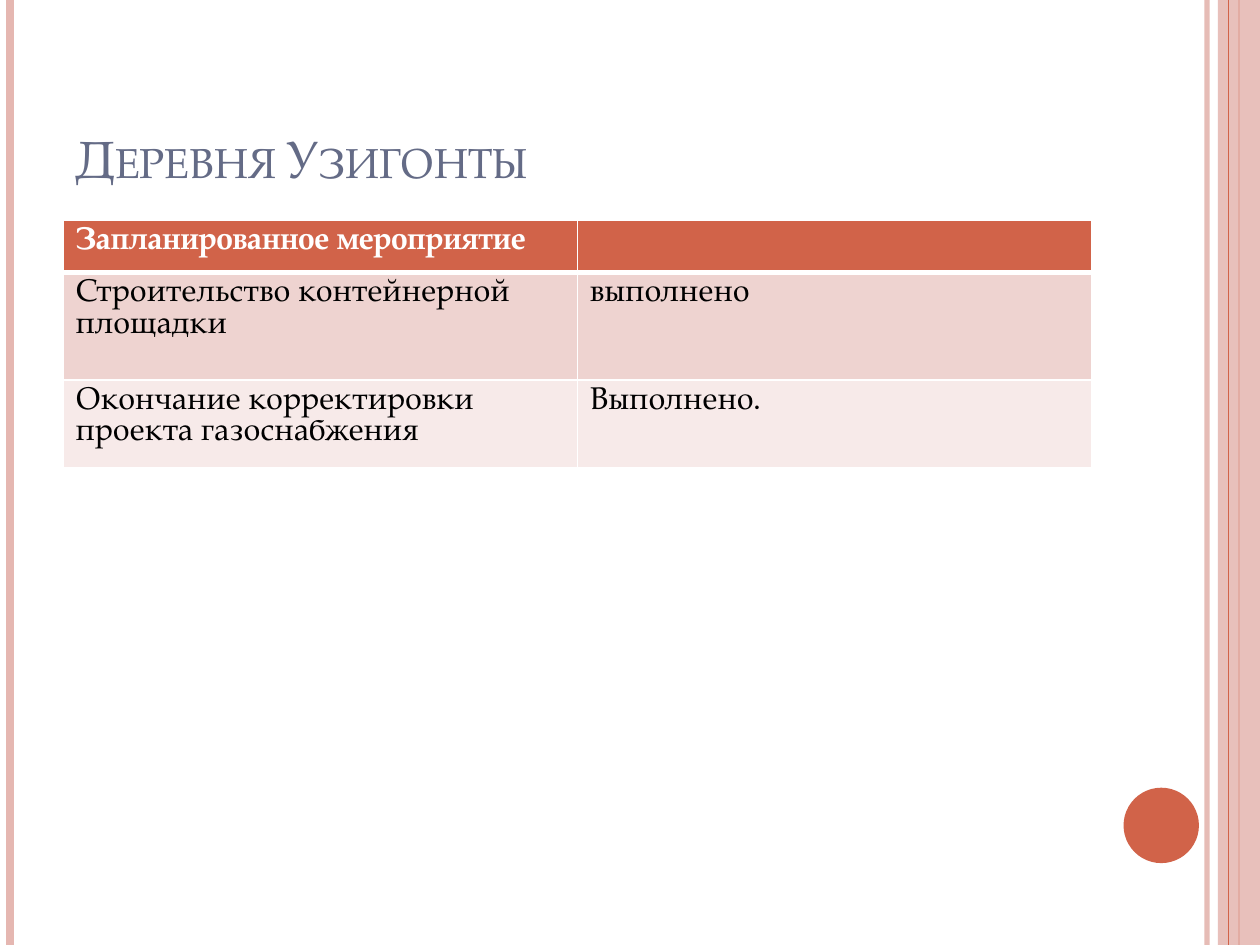
from dataclasses import dataclass

from lxml import etree
from pptx import Presentation
from pptx.dml.color import RGBColor
from pptx.enum.shapes import MSO_CONNECTOR, MSO_SHAPE
from pptx.enum.text import MSO_ANCHOR
from pptx.oxml.ns import qn
from pptx.util import Cm, Pt

STRAIGHT = MSO_CONNECTOR.STRAIGHT
RECTANGLE = MSO_SHAPE.RECTANGLE
OVAL = MSO_SHAPE.OVAL
BOTTOM = MSO_ANCHOR.BOTTOM


@dataclass(frozen=True)
class Theme:
    font: str = "TeX Gyre Pagella"
    title_size: int = 30
    table_size: int = 18
    accent: str = "D16349"
    pink: str = "E5B7B1"
    title: str = "646B86"
    white: str = "FFFFFF"
    text: str = "000000"
    bands: tuple = ("EED3D0", "F7EAE9")


THEME = Theme()
PAGE_WIDTH = Cm(25.4)
PAGE_HEIGHT = Cm(19.05)
ROW_HEIGHTS = (1.04, 2.17, 1.53)
ROWS = (
    ("Запланированное мероприятие", ""),
    ("Строительство контейнерной площадки", "выполнено"),
    ("Окончание корректировки проекта газоснабжения", "Выполнено."),
)


def set_alpha(fill, percent):
    color = fill._xPr.find(qn("a:solidFill"))[0]
    etree.SubElement(color, qn("a:alpha"), val=str(percent * 1000))


def add_stripe(page, x, color, width, opacity=100):
    stripe = page.shapes.add_connector(STRAIGHT, Cm(x), 0, Cm(x), PAGE_HEIGHT)
    stripe.line.color.rgb = RGBColor.from_string(color)
    stripe.line.width = Pt(width)
    if opacity < 100:
        set_alpha(stripe.line.fill, opacity)
    etree.SubElement(stripe._element.spPr, qn("a:effectLst"))


def add_block(page, kind, left, top, width, height, color, opacity=100):
    block = page.shapes.add_shape(kind, left, top, width, height)
    block.shadow.inherit = False
    block.fill.solid()
    block.fill.fore_color.rgb = RGBColor.from_string(color)
    block.line.fill.background()
    if opacity < 100:
        set_alpha(block.fill, opacity)


def add_span(para, text, size, color, bold=False):
    span = para.add_run()
    span.text = text
    span.font.name = THEME.font
    span.font.size = Pt(size)
    span.font.bold = bold
    span.font.color.rgb = RGBColor.from_string(color)
    return span


def add_title(page, text):
    box = page.shapes.add_textbox(Cm(1.27), Cm(0.76), Cm(20.75), Cm(3.18))
    frame = box.text_frame
    frame.word_wrap = True
    frame.vertical_anchor = BOTTOM
    span = add_span(frame.paragraphs[0], text, THEME.title_size, THEME.title)
    span._r.get_or_add_rPr().set("cap", "small")


def set_borders(cell, widths):
    properties = cell._tc.get_or_add_tcPr()
    for index, (side, width) in enumerate(widths.items()):
        border = etree.Element(qn(f"a:ln{side}"), w=str(Pt(width)))
        fill = etree.SubElement(border, qn("a:solidFill"))
        etree.SubElement(fill, qn("a:srgbClr"), val=THEME.white)
        properties.insert(index, border)


def fill_cell(cell, text, row):
    header = row == 0
    color = THEME.accent if header else THEME.bands[(row - 1) % 2]
    cell.fill.solid()
    cell.fill.fore_color.rgb = RGBColor.from_string(color)
    top = 3 if row == 1 else 1
    bottom = 3 if header else 1
    set_borders(cell, {"L": 1, "R": 1, "T": top, "B": bottom})
    para = cell.text_frame.paragraphs[0]
    para.font.size = Pt(THEME.table_size)
    if text:
        text_color = THEME.white if header else THEME.text
        add_span(para, text, THEME.table_size, text_color, header)


def add_plan_table(page):
    table = page.shapes.add_table(
        len(ROWS), 2, Cm(1.27), Cm(4.45), Cm(20.74), Cm(sum(ROW_HEIGHTS))
    ).table
    for row, (height, texts) in enumerate(zip(ROW_HEIGHTS, ROWS)):
        table.rows[row].height = Cm(height)
        for column, text in enumerate(texts):
            fill_cell(table.cell(row, column), text, row)


def add_decoration(page):
    add_stripe(page, 24.33, THEME.pink, 3, 93)
    add_stripe(page, 0.21, THEME.pink, 4.5)
    add_stripe(page, 24.98, THEME.accent, 1.5)
    band_left = Cm(24.55)
    add_block(page, RECTANGLE, band_left, 0, PAGE_WIDTH - band_left, PAGE_HEIGHT,
              THEME.pink, 87)
    add_stripe(page, 24.77, THEME.accent, 0.75)
    add_block(page, OVAL, Cm(22.65), Cm(15.88), Cm(1.52), Cm(1.52), THEME.accent)


def main():
    deck = Presentation()
    deck.slide_width = PAGE_WIDTH
    deck.slide_height = PAGE_HEIGHT
    page = deck.slides.add_slide(deck.slide_layouts[6])
    add_decoration(page)
    add_title(page, "Деревня Узигонты")
    add_plan_table(page)
    deck.save("out.pptx")


if __name__ == "__main__":
    main()
